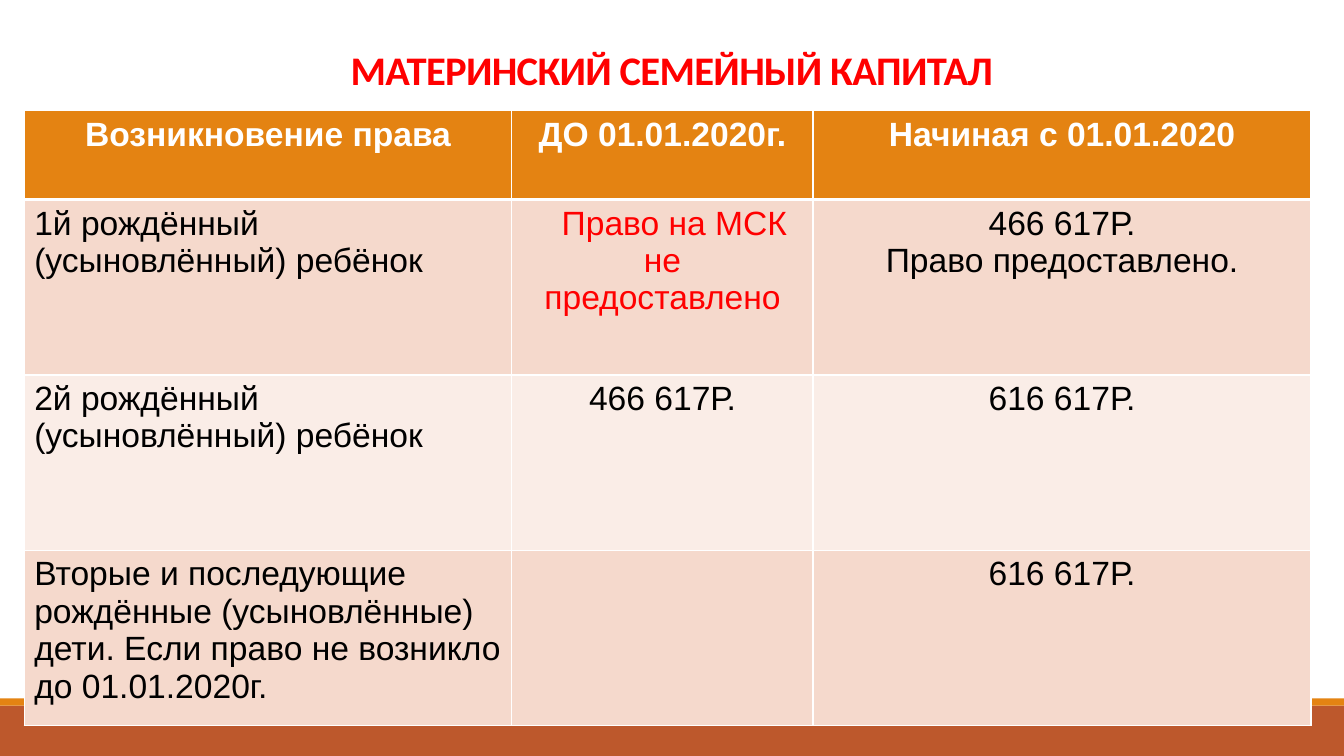
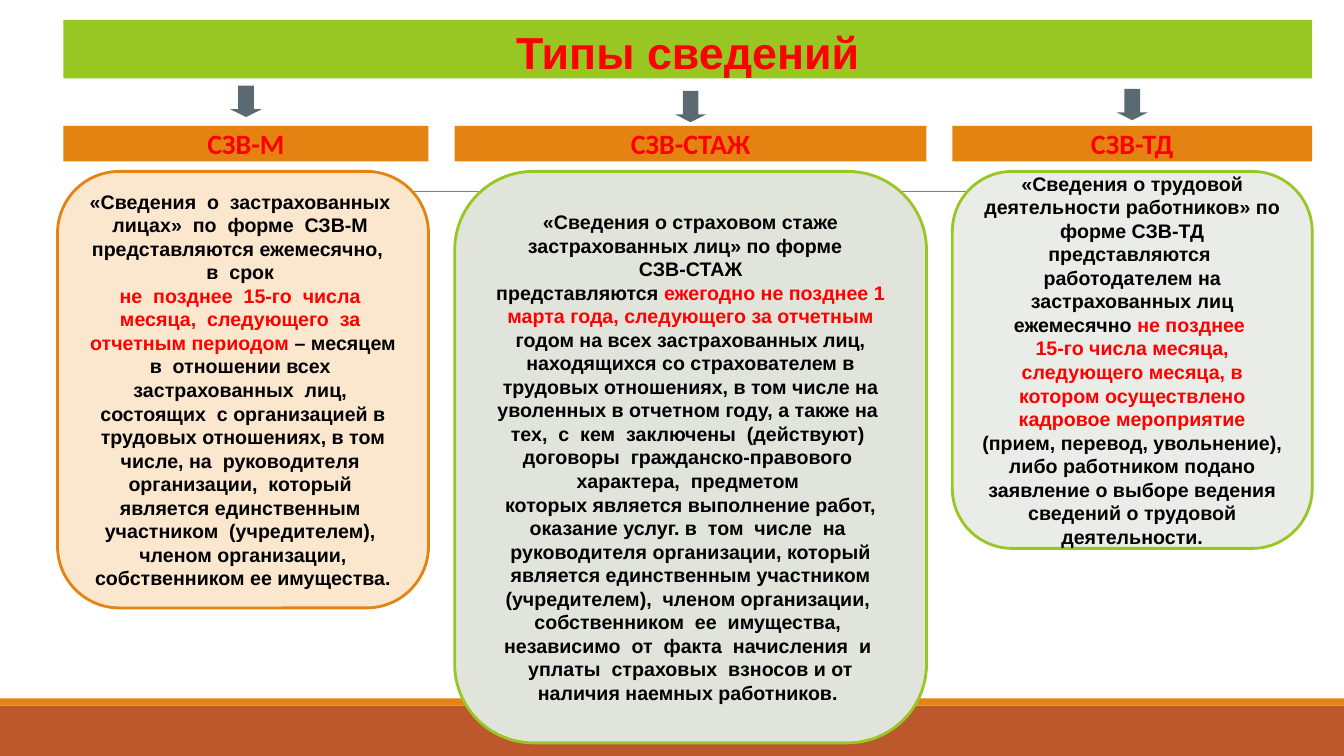
from lxml import etree
from pptx import Presentation
from pptx import util as u
from pptx.dml.color import RGBColor
from pptx.enum import shapes, text
from pptx.oxml import ns

COLORS = {
    "black": "000000", "white": "FFFFFF", "red": "FF0000", "grey": "808080",
    "orange": "E48312", "rust": "BD582C", "green": "98C723", "slate": "5B6973",
    "row_dark": "F5D9CC", "row_light": "FAEDE7",
    "peach": "FBE6CE", "sage": "E0E4DB", "mist": "EAECE7",
}

# Content: a paragraph is a list of (text, colour) runs
CAPITAL_TITLE = "МАТЕРИНСКИЙ СЕМЕЙНЫЙ КАПИТАЛ"
CAPITAL_COLUMNS = [12.29, 7.59, 12.55]
CAPITAL_ROWS = [
    # height, fill, text colours, cells as lists of paragraphs
    (2.24, "orange", ("white",) * 3,
     (["Возникновение права"], ["ДО 01.01.2020г."], ["Начиная с 01.01.2020"])),
    (4.42, "row_dark", ("black", "red", "black"),
     (["1й рождённый (усыновлённый) ребёнок"],
      ["Право на МСК не предоставлено"],
      ["466 617Р.", "Право предоставлено."])),
    (4.42, "row_light", ("black",) * 3,
     (["2й рождённый (усыновлённый) ребёнок"], ["466 617Р."], ["616 617Р."])),
    (4.42, "row_dark", ("black",) * 3,
     (["Вторые и последующие рождённые (усыновлённые) дети. "
       "Если право не возникло до 01.01.2020г."], [], ["616 617Р."])),
]

REPORTS_TITLE = "Типы сведений"
REPORTS = [
    {"name": "СЗВ-М", "bar": (1.6, 9.2), "card": (1.45, 9.35, 11),
     "arrow_top": 2.16, "fill": "peach", "line": "orange",
     "body": [
         [("«Сведения  о  застрахованных ", "black")],
         [("лицах»  по  форме  СЗВ-М  представляются ежемесячно,  ", "black")],
         [("в  срок ", "black")],
         [("не  позднее  15-го  числа  месяца,  следующего  за ", "red")],
         [("отчетным периодом ", "red"),
          ("– месяцем в  отношении всех  застрахованных  лиц,  состоящих  "
           "с организацией в трудовых отношениях, в том числе, на  "
           "руководителя  организации,  который  является единственным  "
           "участником  (учредителем),  членом организации, "
           "собственником ее имущества.", "black")],
     ]},
    {"name": "СЗВ-СТАЖ", "bar": (11.46, 11.89), "card": (11.46, 11.89, 14.4),
     "arrow_top": 2.29, "fill": "sage", "line": "green",
     "body": [
         [("«Сведения о страховом стаже застрахованных лиц» по форме  ", "black")],
         [("СЗВ-СТАЖ", "black")],
         [("представляются ", "black"),
          ("ежегодно не позднее 1 марта года, следующего за отчетным ", "red"),
          ("годом на всех застрахованных лиц, находящихся со страхователем "
           "в трудовых отношениях, в том числе на уволенных в отчетном году, "
           "а также на ", "black")],
         [("тех,  с  кем  заключены  (действуют)  договоры  "
           "гражданско-правового  характера,  предметом ", "black")],
         [("которых является выполнение работ, оказание услуг. "
           "в  том  числе  на ", "black")],
         [("руководителя организации, который является единственным "
           "участником (учредителем),  членом организации,  собственником  "
           "ее  имущества,  независимо  от  факта  начисления  и  уплаты  "
           "страховых  взносов и от наличия наемных работников. ", "black")],
     ]},
    {"name": "СЗВ-ТД", "bar": (24, 9.07), "card": (24, 9.07, 9.5),
     "arrow_top": 2.24, "fill": "mist", "line": "green",
     "body": [
         [("«Сведения о трудовой деятельности работников» по форме СЗВ-ТД "
           "представляются  работодателем на застрахованных лиц ежемесячно ",
           "black"),
          ("не позднее ", "red")],
         [("15-го числа месяца, следующего месяца, в котором осуществлено "
           "кадровое мероприятие ", "red"),
          ("(прием, перевод, увольнение), либо работником подано заявление "
           "о выборе ведения сведений о трудовой деятельности.", "black")],
     ]},
]

SLIDE_W, SLIDE_H = 33.87, 19.05
BAR_TOP, BAR_H, CARD_TOP, ARROW = 3.17, 0.9, 4.32, 0.79
CENTER, LEFT = text.PP_ALIGN.CENTER, text.PP_ALIGN.LEFT
TOP, MIDDLE = text.MSO_ANCHOR.TOP, text.MSO_ANCHOR.MIDDLE
SHAPE = shapes.MSO_SHAPE


def rgb(name):
    return RGBColor.from_string(COLORS[name])


def box(values):
    return [u.Cm(value) for value in values]


def write(frame, paragraphs, size, font="Arial", bold=True, align=CENTER):
    frame.word_wrap = True
    for i, runs in enumerate(paragraphs):
        paragraph = frame.paragraphs[0] if i == 0 else frame.add_paragraph()
        paragraph.alignment = align
        for words, color in runs:
            run = paragraph.add_run()
            run.text = words
            run.font.size, run.font.name, run.font.bold = u.Pt(size), font, bold
            run.font.color.rgb = rgb(color)


def add_block(slide, kind, place, fill, line=None, anchor=TOP):
    block = slide.shapes.add_shape(kind, *box(place))
    block.shadow.inherit = False
    block.fill.solid()
    block.fill.fore_color.rgb = rgb(fill)
    if line:
        block.line.color.rgb = rgb(line)
        block.line.width = u.Pt(2)
    else:
        block.line.fill.background()
    block.text_frame.vertical_anchor = anchor
    return block


def add_base_slide(deck):
    """Blank slide with the shared footer bands and hairline."""
    slide = deck.slides.add_slide(deck.slide_layouts[6])
    add_block(slide, SHAPE.RECTANGLE, (0, 17.78, SLIDE_W, 1.27), "rust")
    add_block(slide, SHAPE.RECTANGLE, (0, 17.6, SLIDE_W, 0.18), "orange")
    hairline = slide.shapes.add_connector(
        shapes.MSO_CONNECTOR.STRAIGHT, *box((3.33, 4.83, 30.99, 4.83)))
    hairline.line.color.rgb = rgb("grey")
    hairline.line.width = u.Pt(0.5)
    etree.SubElement(hairline._element.spPr, ns.qn("a:effectLst"))
    return slide


def set_borders(cell, header):
    properties = cell._tc.get_or_add_tcPr()
    for i, side in enumerate("LRTB"):
        width = 3 if header and side == "B" else 1
        edge = etree.Element(ns.qn(f"a:ln{side}"), w=str(u.Pt(width)))
        fill = etree.SubElement(edge, ns.qn("a:solidFill"))
        etree.SubElement(fill, ns.qn("a:srgbClr"), val=COLORS["white"])
        properties.insert(i, edge)


def build_capital(deck):
    slide = add_base_slide(deck)

    # Title
    title = slide.shapes.add_textbox(*box((3.18, 0.71, 27.51, 1.78))).text_frame
    title.vertical_anchor = text.MSO_ANCHOR.BOTTOM
    write(title, [[(CAPITAL_TITLE, "red")]], 29, "Calibri")
    title.paragraphs[0].line_spacing = 0.85
    title.paragraphs[0].runs[0].font._element.set("spc", "-50")

    # Table
    heights = [row[0] for row in CAPITAL_ROWS]
    place = (0.61, 2.79, sum(CAPITAL_COLUMNS), sum(heights))
    table = slide.shapes.add_table(
        len(heights), len(CAPITAL_COLUMNS), *box(place)).table
    table.horz_banding = False
    for column, width in zip(table.columns, CAPITAL_COLUMNS):
        column.width = u.Cm(width)
    for r, (height, fill, colors, cells) in enumerate(CAPITAL_ROWS):
        table.rows[r].height = u.Cm(height)
        for c, (color, lines) in enumerate(zip(colors, cells)):
            cell = table.cell(r, c)
            cell.fill.solid()
            cell.fill.fore_color.rgb = rgb(fill)
            set_borders(cell, r == 0)
            write(cell.text_frame, [[(line, color)] for line in lines], 24,
                  bold=r == 0, align=LEFT if r and c == 0 else CENTER)

    # First-line indent of the refusal
    refusal = table.cell(1, 1).text_frame.paragraphs[0]
    refusal._p.get_or_add_pPr().set("indent", str(u.Cm(0.6)))


def build_reports(deck):
    slide = add_base_slide(deck)

    # Title band
    band = add_block(slide, SHAPE.RECTANGLE, (1.6, 0.5, 31.47, 1.48), "green")
    write(band.text_frame, [[(REPORTS_TITLE, "red")]], 32)

    # One arrow, name bar and card per report
    for report in REPORTS:
        left, width = report["bar"]
        arrow = add_block(
            slide, SHAPE.DOWN_ARROW,
            (left + (width - ARROW) / 2, report["arrow_top"], ARROW, ARROW),
            "slate")
        arrow.adjustments[0], arrow.adjustments[1] = 0.5, 0.25

        bar = add_block(slide, SHAPE.RECTANGLE, (left, BAR_TOP, width, BAR_H),
                        "orange", anchor=MIDDLE)
        write(bar.text_frame, [[(report["name"], "red")]], 20, "Calibri")

        left, width, height = report["card"]
        card = add_block(slide, SHAPE.ROUNDED_RECTANGLE,
                         (left, CARD_TOP, width, height),
                         report["fill"], report["line"], MIDDLE)
        write(card.text_frame, report["body"], 14)


def main():
    deck = Presentation()
    deck.slide_width, deck.slide_height = u.Cm(SLIDE_W), u.Cm(SLIDE_H)
    build_capital(deck)
    build_reports(deck)
    deck.save("out.pptx")


if __name__ == "__main__":
    main()
